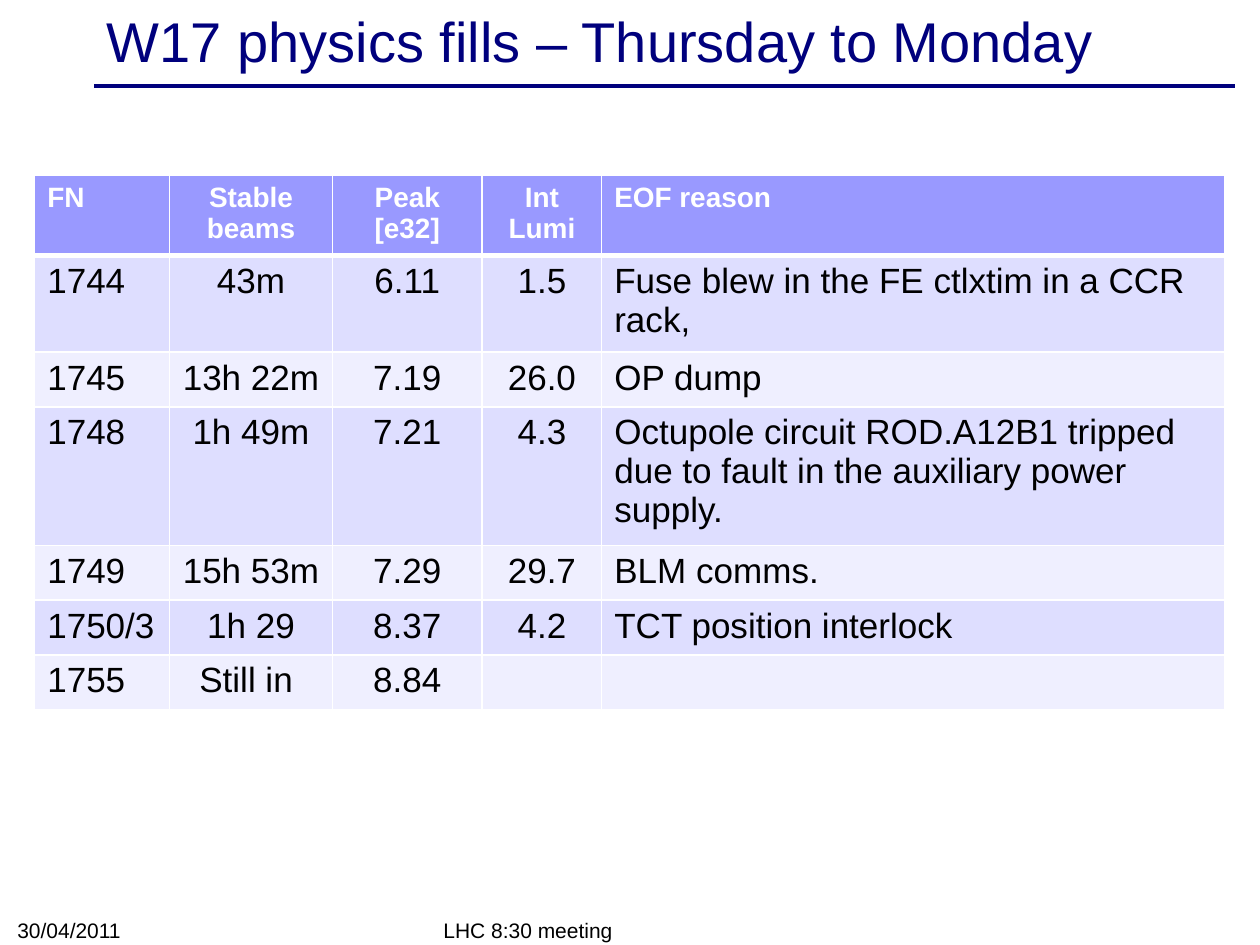
from dataclasses import dataclass

from lxml import etree
from pptx import Presentation
from pptx.dml.color import RGBColor
from pptx.enum.shapes import MSO_CONNECTOR
from pptx.enum.text import MSO_ANCHOR, PP_ALIGN
from pptx.oxml.ns import qn
from pptx.util import Cm, Pt

LEFT, CENTER = PP_ALIGN.LEFT, PP_ALIGN.CENTER
MIDDLE, BOTTOM = MSO_ANCHOR.MIDDLE, MSO_ANCHOR.BOTTOM
STRAIGHT = MSO_CONNECTOR.STRAIGHT
TITLE_ONLY = 5


@dataclass(frozen=True)
class Theme:
    """Colours, font and type sizes of the slide."""
    font: str = "Arial"
    navy: str = "00007D"
    black: str = "000000"
    white: str = "FFFFFF"
    header: str = "9999FF"
    bands: tuple = ("DEDEFF", "EFEFFF")
    title_size: int = 32
    body_size: int = 20
    header_size: int = 16
    footer_size: int = 12


THEME = Theme()
COLUMN_WIDTHS = (2.72, 3.28, 3.02, 2.41, 12.55)
COLUMN_ALIGNS = (LEFT, CENTER, CENTER, CENTER, LEFT)
ROW_HEIGHT = 1.04
HEADINGS = ("FN", "Stable\nbeams", "Peak [e32]", "Int\nLumi", "EOF reason")
FILLS = (
    ("1744", "43m", "6.11", "1.5", "Fuse blew in the FE ctlxtim in a CCR rack,"),
    ("1745", "13h 22m", "7.19", "26.0", "OP dump"),
    ("1748", "1h 49m", "7.21", "4.3",
     "Octupole circuit ROD.A12B1 tripped due to fault in the auxiliary power supply."),
    ("1749", "15h 53m", "7.29", "29.7", "BLM comms."),
    ("1750/3", "1h 29", "8.37", "4.2", "TCT position interlock"),
    ("1755", "Still in ", "8.84", "", ""),
)


def write_text(frame, text, size, color=THEME.black, bold=False, align=LEFT):
    """Put one formatted paragraph into a text frame."""
    frame.word_wrap = True
    para = frame.paragraphs[0]
    para.text = text
    para.alignment = align
    for span in para.runs:
        span.font.name = THEME.font
        span.font.size = Pt(size)
        span.font.bold = bold
        span.font.color.rgb = RGBColor.from_string(color)
    for line_break in para._p.findall(qn("a:br")):
        etree.SubElement(line_break, qn("a:rPr"), sz=str(size * 100))


def add_title(page, text):
    """Fill and place the title placeholder."""
    title = page.shapes.title
    title.left, title.top, title.width, title.height = Cm(1.9), Cm(0.08), Cm(22.86), Cm(1.45)
    title.text_frame.vertical_anchor = MIDDLE
    write_text(title.text_frame, text, THEME.title_size, color=THEME.navy)


def add_rule(page, left, right, top):
    """Draw the horizontal rule under the title."""
    rule = page.shapes.add_connector(STRAIGHT, Cm(left), Cm(top), Cm(right), Cm(top))
    rule.line.color.rgb = RGBColor.from_string(THEME.navy)
    rule.line.width = Pt(2)
    etree.SubElement(rule._element.spPr, qn("a:effectLst"))


def add_footer(page, text, left, width):
    """Add a small text box at the foot of the slide."""
    box = page.shapes.add_textbox(Cm(left), Cm(18.4), Cm(width), Cm(0.72))
    box.text_frame.vertical_anchor = BOTTOM
    write_text(box.text_frame, text, THEME.footer_size)


def set_borders(cell, top=1, bottom=1):
    """Give a cell white borders with the stated widths in points."""
    properties = cell._tc.get_or_add_tcPr()
    for side, width in (("L", 1), ("R", 1), ("T", top), ("B", bottom)):
        line = etree.SubElement(properties, qn(f"a:ln{side}"), w=str(Pt(width)))
        fill = etree.SubElement(line, qn("a:solidFill"))
        etree.SubElement(fill, qn("a:srgbClr"), val=THEME.white)


def fill_cell(cell, text, row, align):
    """Format one cell as heading or banded body."""
    heading = row == 0
    set_borders(cell, top=3 if row == 1 else 1, bottom=3 if heading else 1)
    cell.fill.solid()
    color = THEME.header if heading else THEME.bands[(row - 1) % 2]
    cell.fill.fore_color.rgb = RGBColor.from_string(color)
    write_text(cell.text_frame, text,
               THEME.header_size if heading else THEME.body_size,
               color=THEME.white if heading else THEME.black,
               bold=heading, align=align)


def add_fill_table(page, left, top):
    """Add the table of physics fills."""
    rows = (HEADINGS, *FILLS)
    table = page.shapes.add_table(
        len(rows), len(HEADINGS), Cm(left), Cm(top),
        Cm(sum(COLUMN_WIDTHS)), Cm(ROW_HEIGHT * len(rows))).table
    for column, width in zip(table.columns, COLUMN_WIDTHS):
        column.width = Cm(width)
    for row, texts in enumerate(rows):
        for column, (text, align) in enumerate(zip(texts, COLUMN_ALIGNS)):
            fill_cell(table.cell(row, column), text, row, align)


def main():
    """Build the slide and save it."""
    deck = Presentation()
    deck.slide_width, deck.slide_height = Cm(25.4), Cm(19.05)
    page = deck.slides.add_slide(deck.slide_layouts[TITLE_ONLY])
    add_rule(page, 1.9, 24.9, 1.73)
    add_title(page, "W17 physics fills – Thursday to Monday")
    add_footer(page, "LHC 8:30 meeting", 8.69, 8.05)
    add_footer(page, "30/04/2011", 0.1, 5.92)
    add_fill_table(page, 0.7, 3.54)
    deck.save("out.pptx")


if __name__ == "__main__":
    main()
